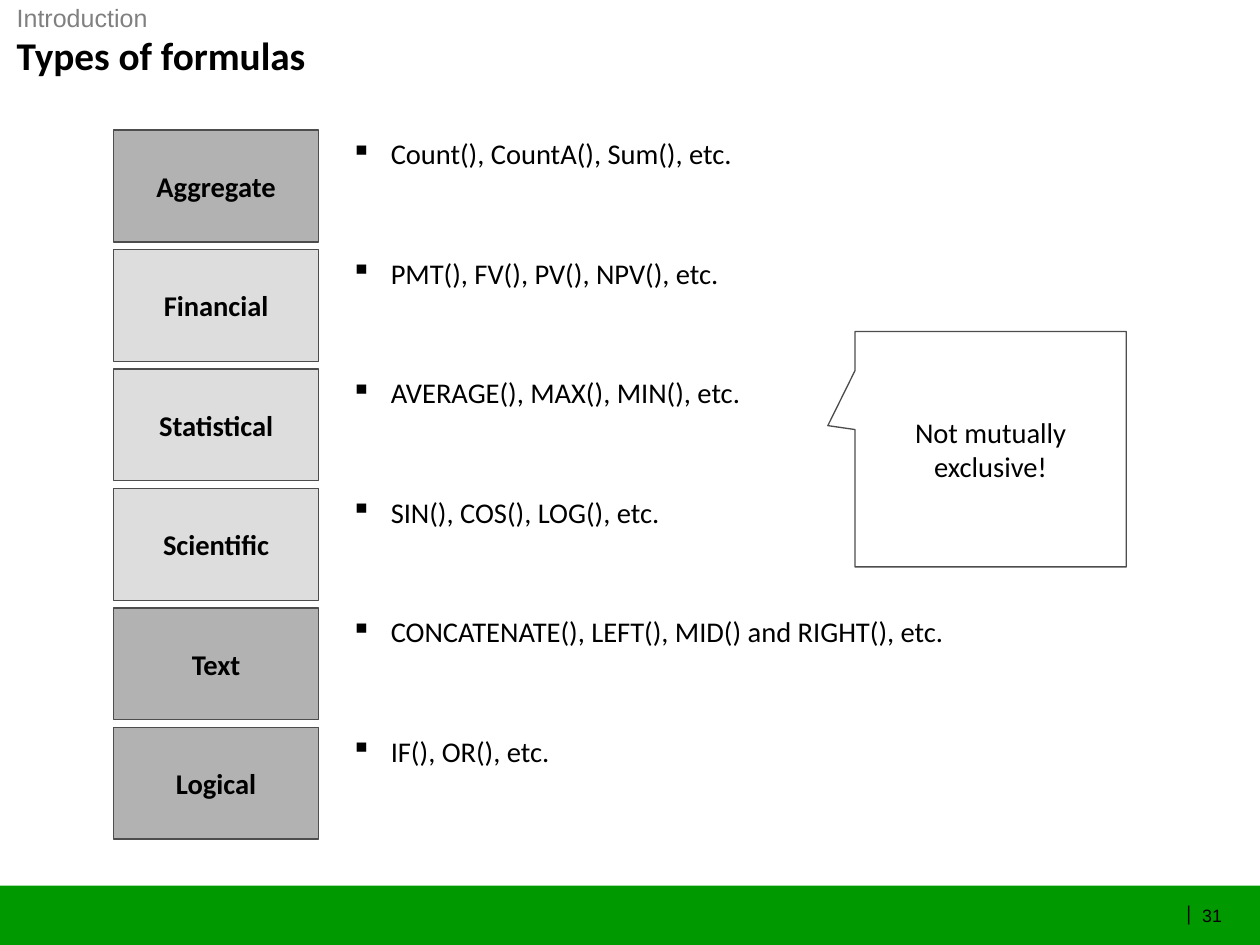
from pptx import Presentation
from pptx.dml.color import RGBColor
from pptx.enum.shapes import MSO_SHAPE
from pptx.enum.text import MSO_ANCHOR, PP_ALIGN
from pptx.oxml import parse_xml
from pptx.oxml.ns import nsdecls
from pptx.util import Cm, Pt

# Content: name, fill, examples
TYPES = [
    ("Aggregate", "dark", "Count(), CountA(), Sum(), etc."),
    ("Financial", "light", "PMT(), FV(), PV(), NPV(), etc."),
    ("Statistical", "light", "AVERAGE(), MAX(), MIN(), etc."),
    ("Scientific", "light", "SIN(), COS(), LOG(), etc."),
    ("Text", "dark", "CONCATENATE(), LEFT(), MID() and RIGHT(), etc."),
    ("Logical", "dark", "IF(), OR(), etc."),
]
TOPIC = "Introduction"
TITLE = "Types of formulas"
REMARK = "Not mutually exclusive!"
PAGE = "31"

THEME = {
    "color": {"black": "000000", "gray": "808080", "line": "4D4D4D",
              "dark": "B2B2B2", "light": "DDDDDD", "green": "009900"},
    "type": {
        "topic": {"name": "Arial", "size": Pt(14)},
        "title": {"name": "Calibri", "size": Pt(22), "bold": True},
        "label": {"name": "Calibri", "size": Pt(16), "bold": True},
        "body": {"name": "Calibri", "size": Pt(16)},
        "mark": {"name": "Calibri", "size": Pt(12)},
        "page": {"name": "Arial", "size": Pt(10)},
    },
}

# Layout in cm
WIDE, HIGH = 24.89, 18.67
TOP, STEP = 2.57, 2.36
LEFT, BOX_W, BOX_H = 2.24, 4.06, 2.21
LIST_X, LIST_W, LIST_H = 6.68, 12.45, 0.94
HANG = Cm(0.79)
FOOT = 1.17
FLAT = {f"margin_{side}": 0 for side in ("left", "right", "top", "bottom")}


def color(key):
    return RGBColor.from_string(THEME["color"][key])


def assign(part, values):
    for key, value in values.items():
        setattr(part, key, value)


def write(shape, text, style, tint="black", align=PP_ALIGN.LEFT, **frame):
    body = shape.text_frame
    assign(body, {"word_wrap": True, **frame})
    para = body.paragraphs[0]
    para.alignment = align
    run = para.add_run()
    run.text = text
    assign(run.font, THEME["type"][style])
    run.font.color.rgb = color(tint)
    return para


def add_text(slide, area, *args, **frame):
    return write(slide.shapes.add_textbox(*map(Cm, area)), *args, **frame)


def add_box(slide, kind, area, fill=None, line=None):
    box = slide.shapes.add_shape(kind, *map(Cm, area))
    box.shadow.inherit = False
    if fill:
        box.fill.solid()
        box.fill.fore_color.rgb = color(fill)
    else:
        box.fill.background()
    if line:
        box.line.color.rgb = color(line)
        box.line.width = Pt(0.75)
    else:
        box.line.fill.background()
    return box


def add_bullet(para):
    props = para._p.get_or_add_pPr()
    props.set("marL", str(HANG))
    props.set("indent", str(-HANG))
    props.append(parse_xml(f'<a:buChar {nsdecls("a")} char="▪"/>'))


def main():
    deck = Presentation()
    assign(deck, {"slide_width": Cm(WIDE), "slide_height": Cm(HIGH)})
    slide = deck.slides.add_slide(deck.slide_layouts[6])
    center = {"align": PP_ALIGN.CENTER, "vertical_anchor": MSO_ANCHOR.MIDDLE}

    # Footer
    add_box(slide, MSO_SHAPE.RECTANGLE, (0, HIGH - FOOT, WIDE, FOOT), "green")
    add_text(slide, (23.39, 17.78, 0.1, 0.51), "|", "mark", align=PP_ALIGN.RIGHT,
             **{**FLAT, "word_wrap": False, "vertical_anchor": MSO_ANCHOR.MIDDLE})
    add_text(slide, (23.75, 17.88, 0.58, 0.43), PAGE, "page",
             **{**FLAT, "word_wrap": False})

    # Heading
    add_text(slide, (0.33, 0.61, 23.95, 0.94), TITLE, "title", **FLAT)
    add_text(slide, (0.33, 0.05, 10.16, 0.61), TOPIC, "topic", "gray", **FLAT)

    # Formula types with examples
    for row, (name, fill, sample) in enumerate(TYPES):
        y = TOP + row * STEP
        box = add_box(slide, MSO_SHAPE.RECTANGLE, (LEFT, y, BOX_W, BOX_H), fill, "line")
        write(box, name, "label", **center)
        add_bullet(add_text(slide, (LIST_X, y, LIST_W, LIST_H), sample, "body"))

    # Remark
    note = add_box(slide, MSO_SHAPE.RECTANGULAR_CALLOUT, (16.89, 6.55, 5.36, 4.65),
                   line="line")
    note.adjustments[0], note.adjustments[1] = -0.6, -0.1
    write(note, REMARK, "body", **center)

    deck.save("out.pptx")


if __name__ == "__main__":
    main()
